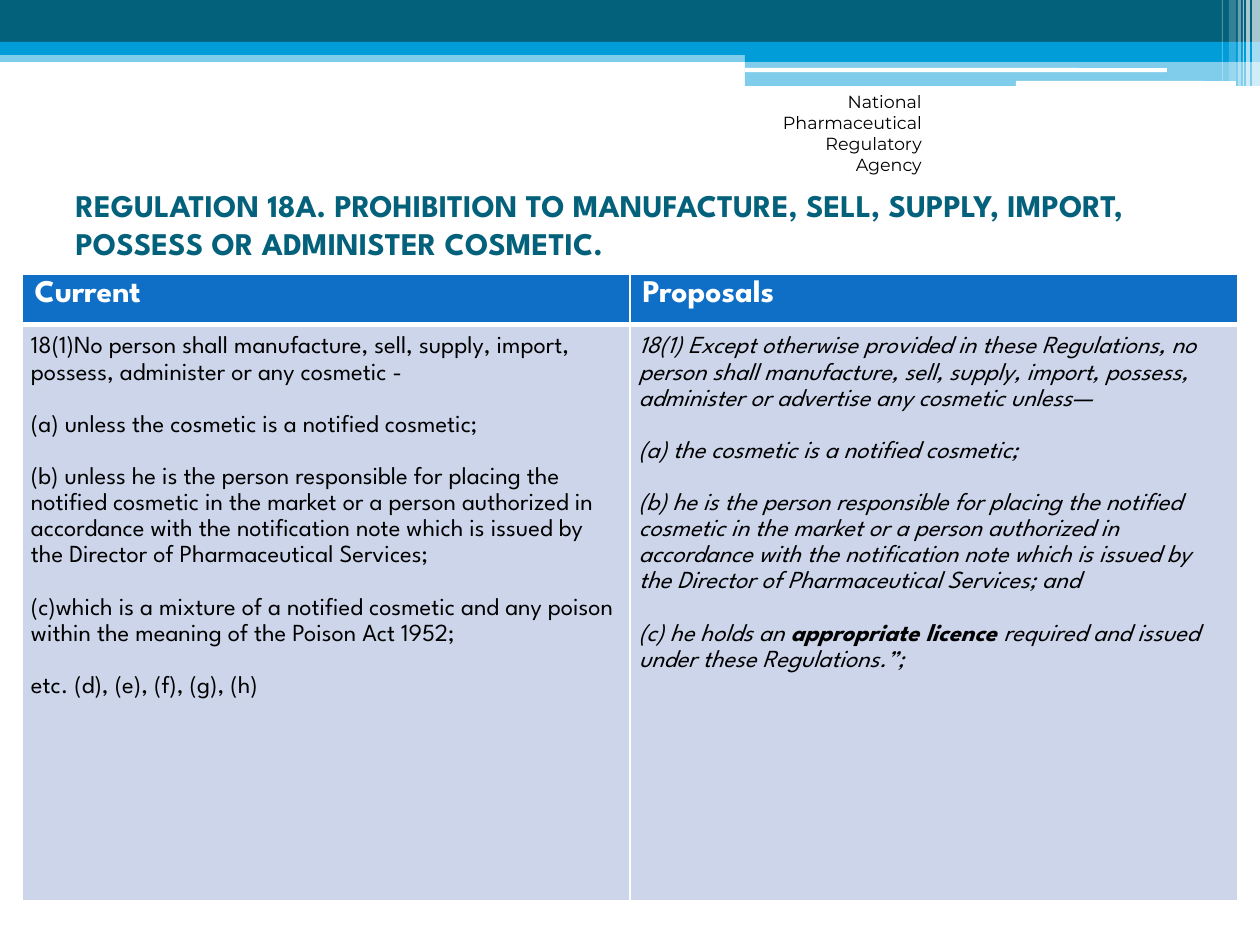
"""Builds the Regulation 18A comparison slide."""
from dataclasses import dataclass

from lxml import etree
from pptx import Presentation
from pptx.dml.color import RGBColor
from pptx.enum.shapes import MSO_SHAPE
from pptx.enum.text import MSO_ANCHOR, MSO_AUTO_SIZE, PP_ALIGN
from pptx.oxml.ns import qn
from pptx.util import Pt

RECTANGLE, ROUNDED = MSO_SHAPE.RECTANGLE, MSO_SHAPE.ROUNDED_RECTANGLE
BOTTOM, NO_AUTOFIT = MSO_ANCHOR.BOTTOM, MSO_AUTO_SIZE.NONE
LEFT, RIGHT = PP_ALIGN.LEFT, PP_ALIGN.RIGHT
PX = 914400 / 126


@dataclass(frozen=True)
class Theme:
    teal: str = "04617B"
    cyan: str = "009DD9"
    white: str = "FFFFFF"
    black: str = "000000"
    header_fill: str = "0F6FC6"
    body_fill: str = "CCD5EA"
    heading_font: str = "League Spartan"
    agency_font: str = "Montserrat"
    heading_size: int = 18
    body_size: int = 14
    agency_size: int = 10


THEME = Theme()


def px(*lengths):
    return [round(length * PX) for length in lengths]


def write(frame, paragraphs, *, size, color, font=THEME.heading_font, bold=False,
          italic=False, align=LEFT, spacing=None, gap=0):
    for index, runs in enumerate(paragraphs):
        paragraph = frame.add_paragraph() if index else frame.paragraphs[0]
        paragraph.alignment = align
        if spacing:
            paragraph.line_spacing = spacing
        if index and gap:
            paragraph.space_before = Pt(gap)
        for position, text in enumerate([runs] if isinstance(runs, str) else runs):
            run = paragraph.add_run()
            run.text = text
            run.font.name = font
            run.font.size = Pt(size)
            run.font.bold = bold or position % 2 == 1
            run.font.italic = italic
            run.font.color.rgb = RGBColor.from_string(color)


presentation = Presentation()
presentation.slide_width, presentation.slide_height = px(1260, 945)
slide = presentation.slides.add_slide(presentation.slide_layouts[5])

BANDS = [
    (0, 50, 1260, 12, RECTANGLE, THEME.cyan, 50),
    (0, 0, 1260, 43, RECTANGLE, THEME.teal, 100),
    (0, 42, 1260, 13, RECTANGLE, THEME.cyan, 100),
    (745, 49, 515, 13, RECTANGLE, THEME.cyan, 100),
    (745, 61, 515, 25, RECTANGLE, THEME.cyan, 50),
    (745, 68, 422, 4, ROUNDED, THEME.white, 100),
    (1016, 81, 220, 5, ROUNDED, THEME.white, 100),
]
STRIPES = [(1252, 8, 86, 65), (1246, 4, 86, 65), (1243, 1, 86, 60),
           (1238, 3, 86, 40), (1229, 7, 81, 20), (1222, 1, 81, 30)]
BANDS += [(left, 0, width, height, RECTANGLE, THEME.white, opacity)
          for left, width, height, opacity in STRIPES]

for left, top, width, height, kind, color, opacity in BANDS:
    shape = slide.shapes.add_shape(kind, *px(left, top, width, height))
    shape.shadow.inherit = False
    shape.fill.solid()
    shape.fill.fore_color.rgb = RGBColor.from_string(color)
    shape.line.fill.background()
    if opacity < 100:
        color_element = shape.fill._xPr.find(".//" + qn("a:srgbClr"))
        etree.SubElement(color_element, qn("a:alpha"), val=str(opacity * 1000))

agency = slide.shapes.add_textbox(*px(724, 85, 210, 63)).text_frame
agency.word_wrap = True
write(agency, ["National", "Pharmaceutical Regulatory", "Agency"],
      size=THEME.agency_size, color=THEME.black, font=THEME.agency_font, align=RIGHT)

title = slide.shapes.title
title.left, title.top, title.width, title.height = px(63, 210, 1134, 84)
title.text_frame.auto_size = NO_AUTOFIT
title.text_frame.vertical_anchor = BOTTOM
title.text_frame.margin_bottom = px(32)[0]
write(title.text_frame, ["REGULATION 18A. PROHIBITION TO MANUFACTURE, SELL, SUPPLY, "
                         "IMPORT, POSSESS OR ADMINISTER COSMETIC."],
      size=THEME.heading_size, color=THEME.teal, bold=True)

COLUMNS = {
    "Current": [
        "18(1)No person shall manufacture, sell, supply, import, possess, "
        "administer or any cosmetic -",
        "(a) unless the cosmetic is a notified cosmetic;",
        "(b) unless he is the person responsible for placing the notified cosmetic "
        "in the market or a person authorized in accordance with the notification "
        "note which is issued by the Director of Pharmaceutical Services;",
        "(c)which is a mixture of a notified cosmetic and any poison within the "
        "meaning of the Poison Act 1952;",
        "etc. (d), (e), (f), (g), (h)",
    ],
    "Proposals": [
        "18(1) Except otherwise provided in these Regulations, no person shall "
        "manufacture, sell, supply, import, possess, administer or advertise any "
        "cosmetic unless—",
        "(a) the cosmetic is a notified cosmetic;",
        "(b) he is the person responsible for placing the notified cosmetic in the "
        "market or a person authorized in accordance with the notification note "
        "which is issued by the Director of Pharmaceutical Services; and",
        ["(c) he holds an ", "appropriate licence ",
         "required and issued under these Regulations.”;"],
    ],
}

table = slide.shapes.add_table(2, 2, *px(22, 274, 1216, 623)).table
table.rows[0].height, table.rows[1].height = px(47, 576)
for index, (heading, clauses) in enumerate(COLUMNS.items()):
    table.columns[index].width = px(608)[0]
    header, body = table.cell(0, index), table.cell(1, index)
    write(header.text_frame, [heading], size=THEME.heading_size,
          color=THEME.white, bold=True)
    body.margin_left = body.margin_right = body.margin_top = body.margin_bottom = px(9)[0]
    write(body.text_frame, clauses, size=THEME.body_size, color=THEME.black,
          italic=index == 1, spacing=1.15, gap=15)
    for cell, fill, edges in (
            (header, THEME.header_fill, {"L": 1, "R": 1, "T": 1, "B": 3}),
            (body, THEME.body_fill, {"L": 1, "R": 1, "T": 3, "B": 1})):
        properties = cell._tc.get_or_add_tcPr()
        for edge, points in edges.items():
            line = etree.SubElement(properties, qn(f"a:ln{edge}"), w=str(Pt(points)))
            solid = etree.SubElement(line, qn("a:solidFill"))
            etree.SubElement(solid, qn("a:srgbClr"), val=THEME.white)
        cell.fill.solid()
        cell.fill.fore_color.rgb = RGBColor.from_string(fill)

presentation.save("out.pptx")
